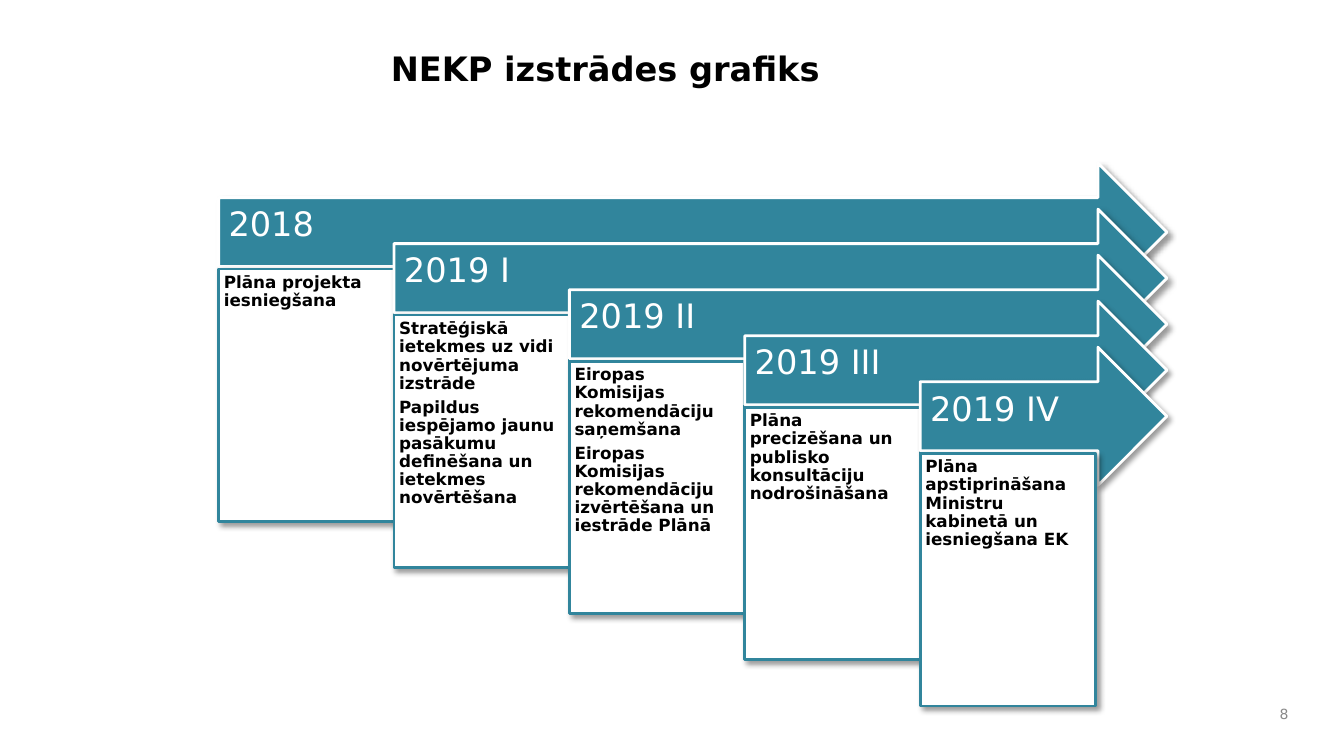
"""Builds the NEKP schedule slide with five cascading arrows."""
from lxml import etree
from pptx import Presentation
from pptx.dml.color import RGBColor
from pptx.enum.shapes import MSO_SHAPE
from pptx.enum.text import MSO_ANCHOR, PP_ALIGN
from pptx.oxml.ns import qn
from pptx.util import Cm, Pt

TITLE = "NEKP izstrādes grafiks"
PAGE = "8"
STAGES = [
    ("2018", ["Plāna projekta iesniegšana"]),
    ("2019 I", ["Stratēģiskā ietekmes uz vidi novērtējuma izstrāde",
                "Papildus iespējamo jaunu pasākumu definēšana un ietekmes novērtēšana"]),
    ("2019 II", ["Eiropas Komisijas rekomendāciju saņemšana",
                 "Eiropas Komisijas rekomendāciju izvērtēšana un iestrāde Plānā"]),
    ("2019 III", ["Plāna precizēšana un publisko konsultāciju nodrošināšana"]),
    ("2019 IV", ["Plāna apstiprināšana Ministru kabinetā un iesniegšana EK"]),
]

FONT = "DejaVu Sans"
TEAL = RGBColor(0x31, 0x85, 0x9C)
WHITE = RGBColor(0xFF, 0xFF, 0xFF)
BLACK = RGBColor(0, 0, 0)
GREY = RGBColor(0x89, 0x89, 0x89)
ARROW, BOX = MSO_SHAPE.RIGHT_ARROW, MSO_SHAPE.RECTANGLE
TOP, MIDDLE = MSO_ANCHOR.TOP, MSO_ANCHOR.MIDDLE
LEFT, RIGHT = PP_ALIGN.LEFT, PP_ALIGN.RIGHT

FIRST_X, FIRST_Y = 5.51, 4.11
STEP_X, STEP_Y = 4.42, 1.16
ARROW_END, ARROW_H = 29.41, 3.48
BOX_DROP, BOX_H = 2.67, 6.37
TITLE_INSETS = (0.25, 0.13, 0.25, 0.13)
ARROW_INSETS = (0.25, 0.25, 0.71, 0.56)
BOX_INSETS = (0.13, 0.13, 0.13, 0.13)


def write(sp, lines, size, color, insets, anchor=TOP, align=LEFT, bold=False, spacing=1.0):
    tf = sp.text_frame
    tf.word_wrap = True
    tf.vertical_anchor = anchor
    tf.margin_left, tf.margin_top, tf.margin_right, tf.margin_bottom = map(Cm, insets)
    for i, line in enumerate(lines):
        p = tf.paragraphs[0] if i == 0 else tf.add_paragraph()
        p.alignment = align
        p.line_spacing = spacing
        if i < len(lines) - 1:
            p.space_after = Pt(0.35 * size)
        r = p.add_run()
        r.text = line
        r.font.name, r.font.size, r.font.bold = FONT, Pt(size), bold
        r.font.color.rgb = color


def add_text(s, x, y, w, h, *args, **kwargs):
    write(s.shapes.add_textbox(Cm(x), Cm(y), Cm(w), Cm(h)), *args, **kwargs)


def add_block(s, kind, x, y, w, h, fill, line):
    sp = s.shapes.add_shape(kind, Cm(x), Cm(y), Cm(w), Cm(h))
    sp.fill.solid()
    sp.fill.fore_color.rgb = fill
    sp.line.color.rgb = line
    sp.line.width = Pt(2)
    sp.shadow.inherit = False
    effects = sp._element.spPr.find(qn("a:effectLst"))
    shadow = etree.SubElement(effects, qn("a:outerShdw"), blurRad=str(Pt(4)),
                              dist=str(Pt(3)), dir=str(45 * 60000), rotWithShape="0")
    color = etree.SubElement(shadow, qn("a:srgbClr"), val=str(BLACK))
    etree.SubElement(color, qn("a:alpha"), val="40000")
    return sp


def main():
    prs = Presentation()
    prs.slide_width, prs.slide_height = Cm(33.87), Cm(19.05)
    s = prs.slides.add_slide(prs.slide_layouts[6])

    add_text(s, 9.6, 1.07, 22.58, 2.87, [TITLE], 24, BLACK, TITLE_INSETS, bold=True)

    for i, (period, tasks) in enumerate(STAGES):
        x, y = FIRST_X + i * STEP_X, FIRST_Y + i * STEP_Y
        arrow = add_block(s, ARROW, x, y, ARROW_END - x, ARROW_H, TEAL, WHITE)
        write(arrow, [period], 24, WHITE, ARROW_INSETS, MIDDLE, spacing=0.9)
        box = add_block(s, BOX, x, y + BOX_DROP, STEP_X, BOX_H, WHITE, TEAL)
        write(box, tasks, 12, BLACK, BOX_INSETS, bold=True, spacing=0.9)

    add_text(s, 31.6, 17.58, 1.12, 0.84, [PAGE], 10, GREY, TITLE_INSETS, MIDDLE, RIGHT)
    prs.save("out.pptx")


if __name__ == "__main__":
    main()
